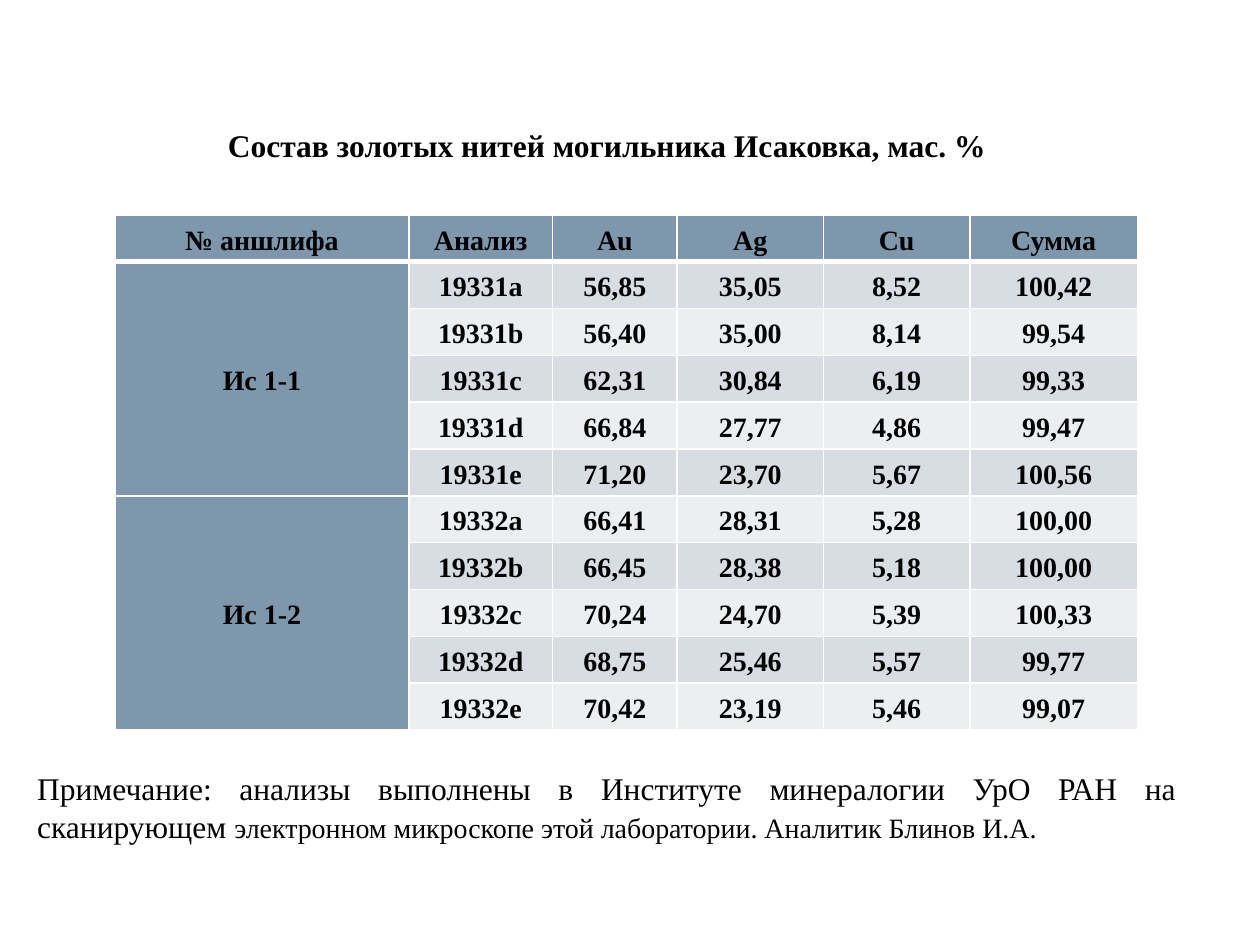
from dataclasses import dataclass

from lxml.etree import SubElement
from pptx import Presentation
from pptx.dml.color import RGBColor
from pptx.enum.text import MSO_ANCHOR, PP_ALIGN
from pptx.oxml.ns import qn
from pptx.util import Cm, Pt


@dataclass(frozen=True)
class Theme:
    font: str = "Times New Roman"
    text: str = "000000"
    head: str = "7E97AD"
    bands: tuple = ("D8DDE3", "ECEFF1")
    border: str = "FFFFFF"
    large: int = 18
    body: int = 16


THEME = Theme()

TITLE = "Состав золотых нитей могильника Исаковка, мас. %"
NOTE = "Примечание: анализы выполнены в Институте минералогии УрО РАН на сканирующем "
NOTE_END = "электронном микроскопе этой лаборатории. Аналитик Блинов И.А."

HEADER = ("№ аншлифа", "Анализ", "Au", "Ag", "Cu", "Сумма")
SAMPLES = {
    "Ис 1-1": (
        ("19331a", "56,85", "35,05", "8,52", "100,42"),
        ("19331b", "56,40", "35,00", "8,14", "99,54"),
        ("19331c", "62,31", "30,84", "6,19", "99,33"),
        ("19331d", "66,84", "27,77", "4,86", "99,47"),
        ("19331e", "71,20", "23,70", "5,67", "100,56"),
    ),
    "Ис 1-2": (
        ("19332a", "66,41", "28,31", "5,28", "100,00"),
        ("19332b", "66,45", "28,38", "5,18", "100,00"),
        ("19332c", "70,24", "24,70", "5,39", "100,33"),
        ("19332d", "68,75", "25,46", "5,57", "99,77"),
        ("19332e", "70,42", "23,19", "5,46", "99,07"),
    ),
}
COL_WIDTHS = (5.92, 2.9, 2.51, 2.95, 2.95, 3.38)


def add_text(p, text, size=THEME.body, bold=False, align=None, line=None, before=None):
    """Add a formatted run to a paragraph."""
    if align is not None:
        p.alignment = align
    if line is not None:
        p.line_spacing = line
    if before is not None:
        p.space_before = Pt(before)
    r = p.add_run()
    r.text = text
    r.font.name = THEME.font
    r.font.size = Pt(size)
    r.font.bold = bold
    r.font.color.rgb = RGBColor.from_string(THEME.text)


def set_borders(cell, top=1, bottom=1):
    tc_pr = cell._tc.get_or_add_tcPr()
    for side, width in (("L", 1), ("R", 1), ("T", top), ("B", bottom)):
        ln = SubElement(tc_pr, qn(f"a:ln{side}"), w=str(Pt(width)))
        fill = SubElement(ln, qn("a:solidFill"))
        SubElement(fill, qn("a:srgbClr"), val=THEME.border)


def fill_cell(cell, text, color, **borders):
    set_borders(cell, **borders)
    cell.fill.solid()
    cell.fill.fore_color.rgb = RGBColor.from_string(color)
    cell.vertical_anchor = MSO_ANCHOR.MIDDLE
    cell.margin_left = cell.margin_right = Cm(0.18)
    cell.margin_top = cell.margin_bottom = 0
    if text:
        add_text(cell.text_frame.paragraphs[0], text, bold=True,
                 align=PP_ALIGN.CENTER, line=1.15)


def add_composition_table(s, left, top, width, height):
    rows = [(name if i == 0 else "", *values)
            for name, group in SAMPLES.items() for i, values in enumerate(group)]
    table = s.shapes.add_table(len(rows) + 1, len(HEADER), left, top, width, height).table
    for column, share in zip(table.columns, COL_WIDTHS):
        column.width = int(width * share / sum(COL_WIDTHS))
    for row in table.rows:
        row.height = int(height / len(table.rows))

    # Header row
    for col, text in enumerate(HEADER):
        fill_cell(table.cell(0, col), text, THEME.head, bottom=3)

    # Sample names on the left, banded values on the right
    for i, values in enumerate(rows):
        for col, text in enumerate(values):
            color = THEME.head if col == 0 else THEME.bands[i % 2]
            fill_cell(table.cell(i + 1, col), text, color, top=3 if i == 0 else 1)

    # One merged cell per sample
    first = 1
    for group in SAMPLES.values():
        last = first + len(group) - 1
        table.cell(first, 0).merge(table.cell(last, 0))
        first = last + 1


def add_title_and_note(s, left, top, width, height):
    tf = s.shapes.add_textbox(left, top, width, height).text_frame
    tf.word_wrap = True
    tf.vertical_anchor = MSO_ANCHOR.MIDDLE
    add_text(tf.paragraphs[0], TITLE, size=THEME.large, bold=True, align=PP_ALIGN.CENTER)
    # The gap before the note leaves room for the table
    p = tf.add_paragraph()
    add_text(p, NOTE, size=THEME.large, align=PP_ALIGN.JUSTIFY, before=346)
    add_text(p, NOTE_END)


def main():
    prs = Presentation()
    prs.slide_width, prs.slide_height = Cm(25.4), Cm(19.05)
    s = prs.slides.add_slide(prs.slide_layouts[6])
    add_composition_table(s, Cm(2.32), Cm(4.33), Cm(20.61), Cm(10.39))
    add_title_and_note(s, Cm(0.5), Cm(2.34), Cm(23.47), Cm(14.88))
    prs.save("out.pptx")


if __name__ == "__main__":
    main()
